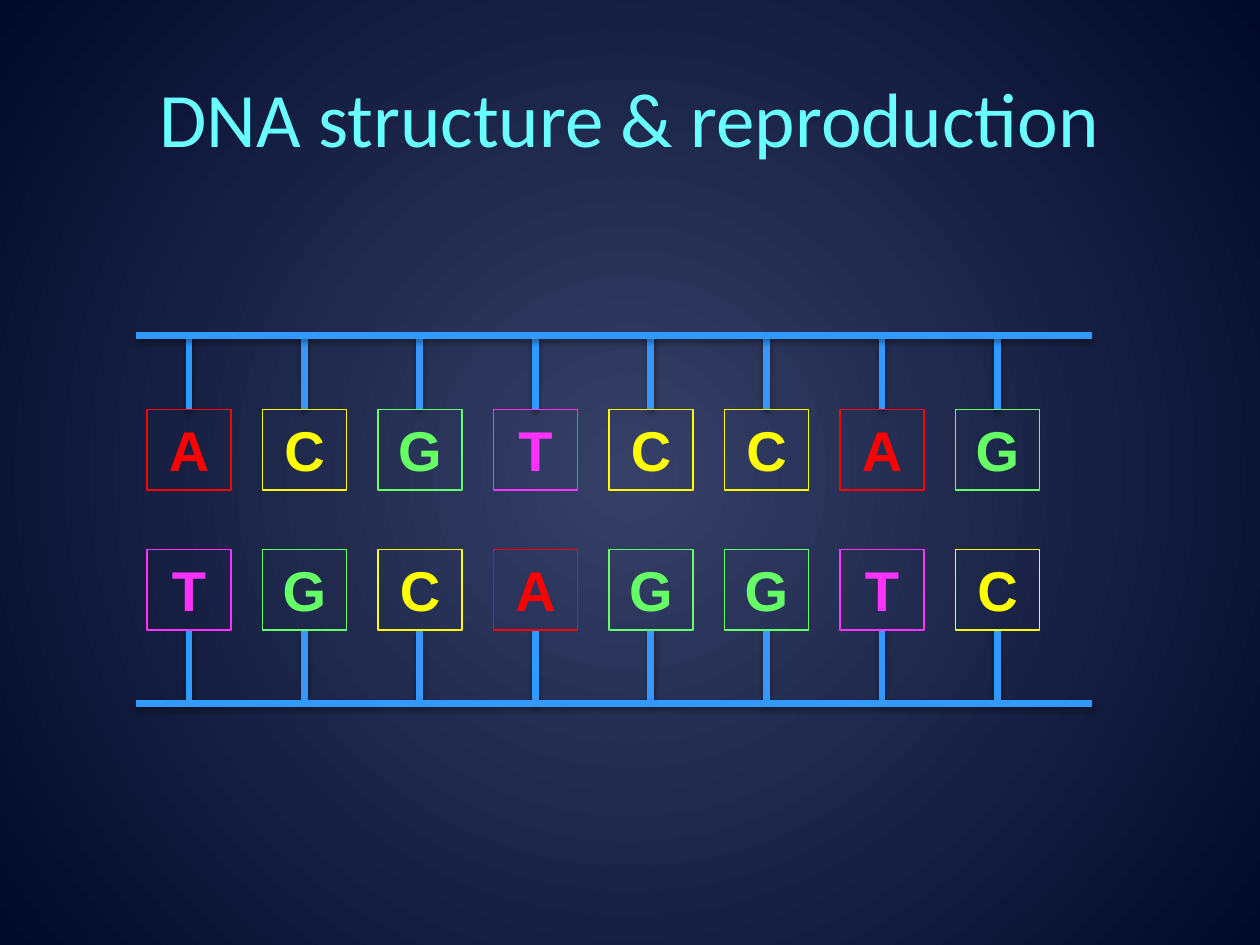
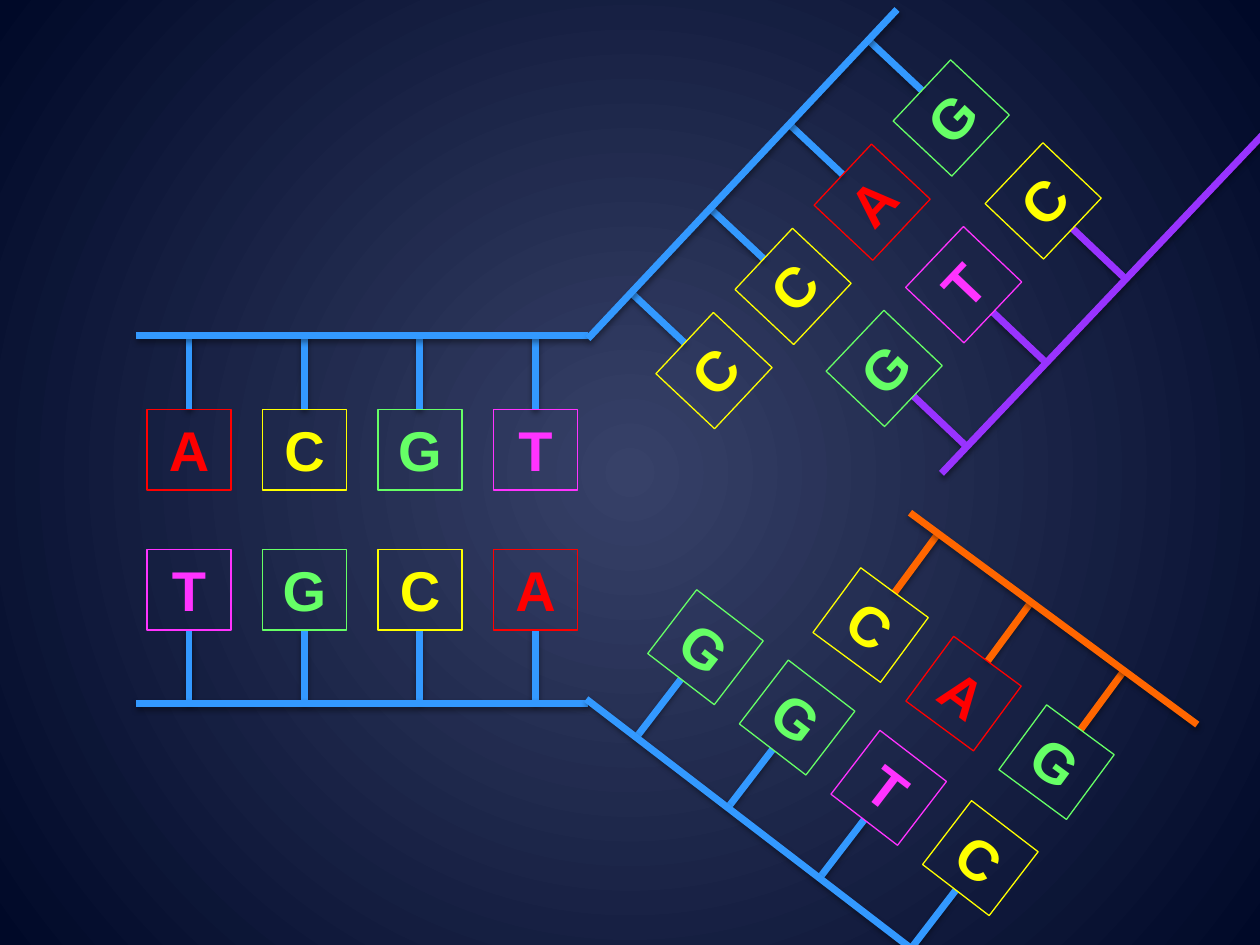
"""Build two slides on DNA structure and its copying."""
import math
from lxml import etree
from pptx import Presentation
from pptx import util as u
from pptx.dml import color
from pptx.enum import shapes, text
from pptx.oxml import ns

TITLE = "DNA structure & reproduction"
TINTS = {"A": "FF0000", "C": "FFFF00", "G": "66FF66", "T": "FF33FF"}
BLUE, ORANGE, PURPLE, CYAN = "3399FF", "FF6600", "9933FF", "69FFFF"
GLOW = ("374168", "000928")
DOWN, UP = 1, -1
WIDE, HIGH, STEM, STEP = 48, 46, 42, 66

# letters, start, length, gap before first stem, angle, side, colour
WHOLE = [
    ("ACGTCCAG", (78, 192), 546, 30, 0, DOWN, BLUE),
    ("TGCAGGTC", (78, 402), 546, 30, 0, UP, BLUE),
]
SPLIT = [
    ("ACGT", (78, 192), 258, 30, 0, DOWN, BLUE),
    ("TGCA", (78, 402), 258, 30, 0, UP, BLUE),
    ("GGTC", (335, 399.5), 282, 36, 37.5, UP, BLUE),
    ("CCAG", (336, 193.5), 258, 36, -46.8, DOWN, BLUE),
    ("CAG", (520, 293), 204, 20, 36.4, DOWN, ORANGE),
    ("GTC", (538, 270.5), 282, 21, -46.5, UP, PURPLE),
]
NS = 'xmlns:a="http://schemas.openxmlformats.org/drawingml/2006/main"'
SHADE = (f'<a:effectLst {NS}><a:outerShdw blurRad="40000" dist="20000" dir="5400000" '
         'rotWithShape="0"><a:srgbClr val="000000"><a:alpha val="38000"/></a:srgbClr>'
         '</a:outerShdw></a:effectLst>')
ROUND = (f'<a:path {NS} path="circle"><a:fillToRect l="50000" t="50000" '
         'r="50000" b="50000"/></a:path>')


def rgb(code):
    """Turn a hex string into a colour."""
    return color.RGBColor.from_string(code)


def write(shape, words, font="Arial", size=32, tint=CYAN, bold=False,
          anchor=text.MSO_ANCHOR.TOP):
    """Put centred, formatted words in a shape."""
    frame = shape.text_frame
    frame.word_wrap = True
    frame.vertical_anchor = anchor
    para = frame.paragraphs[0]
    para.alignment = text.PP_ALIGN.CENTER
    run = para.add_run()
    run.text = words
    run.font.name, run.font.size, run.font.bold = font, u.Pt(size), bold
    run.font.color.rgb = rgb(tint)


def link(slide, start, end, tint):
    """Draw a thick line with a soft shadow."""
    ends = [u.Pt(v) for v in (*start, *end)]
    line = slide.shapes.add_connector(shapes.MSO_CONNECTOR.STRAIGHT, *ends)
    line.line.width = u.Pt(4)
    line.line.color.rgb = rgb(tint)
    line.element.spPr.append(etree.fromstring(SHADE))


def base(slide, letter, mid, angle):
    """Draw one lettered box around its middle."""
    box = slide.shapes.add_shape(
        shapes.MSO_SHAPE.RECTANGLE, u.Pt(mid[0] - WIDE / 2),
        u.Pt(mid[1] - HIGH / 2), u.Pt(WIDE), u.Pt(HIGH))
    box.rotation = angle % 360
    box.shadow.inherit = False
    box.fill.background()
    box.line.width = u.Pt(0.75)
    box.line.color.rgb = rgb(TINTS[letter])
    write(box, letter, tint=TINTS[letter], bold=True)


def strand(slide, letters, start, length, lead, angle, side, tint):
    """Draw a backbone with a stem and box for each letter."""
    turn = math.radians(angle)
    cos, sin = math.cos(turn), math.sin(turn)

    def spot(along, out=0):
        """Find a point along and away from the backbone."""
        off = out * side
        return (start[0] + along * cos - off * sin,
                start[1] + along * sin + off * cos)

    for i, letter in enumerate(letters):
        along = lead + i * STEP
        link(slide, spot(along), spot(along, STEM), tint)
        base(slide, letter, spot(along, STEM + HIGH / 2), angle)
    link(slide, start, spot(length), tint)


def paint(master):
    """Give all slides the round gradient."""
    fill = master.background.fill
    fill.gradient()
    for stop, code, place in zip(fill.gradient_stops, GLOW, (0, 1)):
        stop.color.rgb = rgb(code)
        stop.position = place
    grad = master.element.find(".//" + ns.qn("p:bgPr") + "/" + ns.qn("a:gradFill"))
    grad.replace(grad.find(ns.qn("a:lin")), etree.fromstring(ROUND))


def main():
    """Make both slides and save them."""
    deck = Presentation()
    deck.slide_width, deck.slide_height = u.Pt(720), u.Pt(540)
    paint(deck.slide_master)
    for title, strands in ((TITLE, WHOLE), (None, SPLIT)):
        slide = deck.slides.add_slide(deck.slide_layouts[6])
        if title:
            head = slide.shapes.add_textbox(u.Pt(36), u.Pt(21.6), u.Pt(648), u.Pt(90))
            write(head, title, font="Calibri", size=44, anchor=text.MSO_ANCHOR.MIDDLE)
        for part in strands:
            strand(slide, *part)
    deck.save("out.pptx")


if __name__ == "__main__":
    main()
